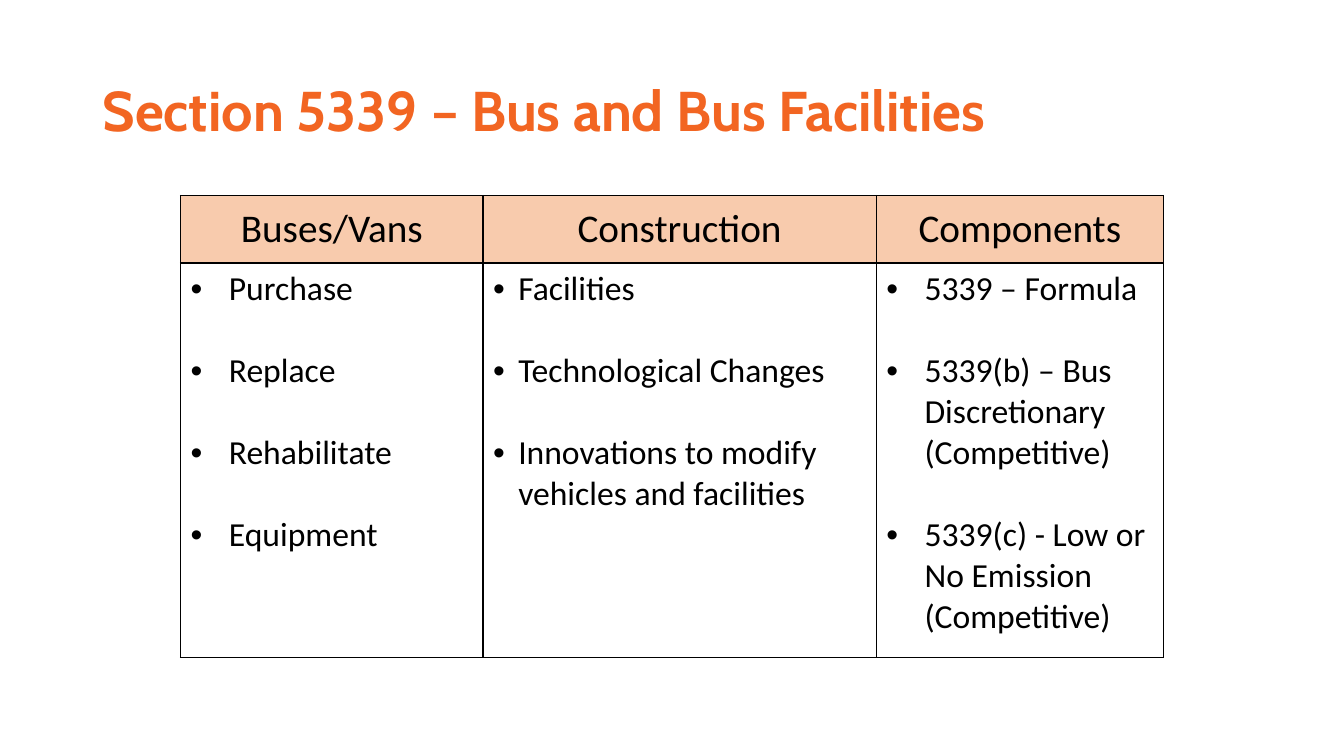
from lxml import etree
from pptx import Presentation
from pptx.dml.color import RGBColor
from pptx.enum.text import MSO_ANCHOR, PP_ALIGN
from pptx.oxml.ns import qn
from pptx.util import Inches, Pt

MIDDLE, TOP = MSO_ANCHOR.MIDDLE, MSO_ANCHOR.TOP
CENTER, LEFT = PP_ALIGN.CENTER, PP_ALIGN.LEFT

TITLE = "Section 5339 – Bus and Bus Facilities"
COLUMNS = [
    {"head": "Buses/Vans", "width": 3, "indent": 0.38,
     "items": ["Purchase", "Replace", "Rehabilitate", "Equipment"]},
    {"head": "Construction", "width": 3.9, "indent": 0.25,
     "items": ["Facilities", "Technological Changes",
               "Innovations to modify vehicles and facilities"]},
    {"head": "Components", "width": 2.85, "indent": 0.38,
     "items": ["5339 – Formula", "5339(b) – Bus Discretionary (Competitive)",
               "5339(c) - Low or No Emission (Competitive)"]},
]
ROW_HEIGHTS = [0.67, 3.91]
COLORS = {"title": "F26522", "head": "F8CBAD", "text": "000000", "border": "000000"}
FORMATS = {
    "title": {"name": "Cabin", "size": Pt(40), "bold": True},
    "head": {"name": "Calibri", "size": Pt(28), "bold": False},
    "item": {"name": "Calibri", "size": Pt(24), "bold": False},
}
ITEM_GAP = Pt(29.3)


def add_text(p, text, style, color):
    r = p.add_run()
    r.text = text
    for key, value in FORMATS[style].items():
        setattr(r.font, key, value)
    r.font.color.rgb = RGBColor.from_string(COLORS[color])


def add_bullet(p, indent):
    pPr = p._p.get_or_add_pPr()
    pPr.set("marL", str(Inches(indent)))
    pPr.set("indent", str(-Inches(indent)))
    etree.SubElement(pPr, qn("a:buFont")).set("typeface", "Arial")
    etree.SubElement(pPr, qn("a:buChar")).set("char", "•")


def add_borders(cell):
    tcPr = cell._tc.get_or_add_tcPr()
    for side in ("lnL", "lnR", "lnT", "lnB"):
        ln = etree.SubElement(tcPr, qn(f"a:{side}"), w=str(Pt(1)))
        fill = etree.SubElement(ln, qn("a:solidFill"))
        etree.SubElement(fill, qn("a:srgbClr"), val=COLORS["border"])


def add_title(s):
    tf = s.shapes.add_textbox(Inches(0.92), Inches(0.4), Inches(11.5), Inches(1.45)).text_frame
    tf.word_wrap = True
    tf.vertical_anchor = MIDDLE
    p = tf.paragraphs[0]
    p.line_spacing = 0.9
    add_text(p, TITLE, "title", "title")


def add_program_table(s):
    width = sum(column["width"] for column in COLUMNS)
    table = s.shapes.add_table(len(ROW_HEIGHTS), len(COLUMNS), Inches(1.79), Inches(1.94),
                               Inches(width), Inches(sum(ROW_HEIGHTS))).table
    table.first_row = table.horz_banding = False
    for row, height in zip(table.rows, ROW_HEIGHTS):
        row.height = Inches(height)
    for c, column in enumerate(COLUMNS):
        table.columns[c].width = Inches(column["width"])
        head, body = table.cell(0, c), table.cell(1, c)
        for cell, anchor in ((head, MIDDLE), (body, TOP)):
            add_borders(cell)
            cell.vertical_anchor = anchor
        head.fill.solid()
        head.fill.fore_color.rgb = RGBColor.from_string(COLORS["head"])
        body.fill.background()
        p = head.text_frame.paragraphs[0]
        p.alignment = CENTER
        add_text(p, column["head"], "head", "text")
        tf = body.text_frame
        for i, item in enumerate(column["items"]):
            p = tf.add_paragraph() if i else tf.paragraphs[0]
            add_bullet(p, column["indent"])
            p.alignment = LEFT
            if i:
                p.space_before = ITEM_GAP
            add_text(p, item, "item", "text")


def main():
    """Build the Section 5339 slide."""
    prs = Presentation()
    prs.slide_width, prs.slide_height = Inches(13.33), Inches(7.5)
    s = prs.slides.add_slide(prs.slide_layouts[6])
    add_title(s)
    add_program_table(s)
    prs.save("out.pptx")


if __name__ == "__main__":
    main()
